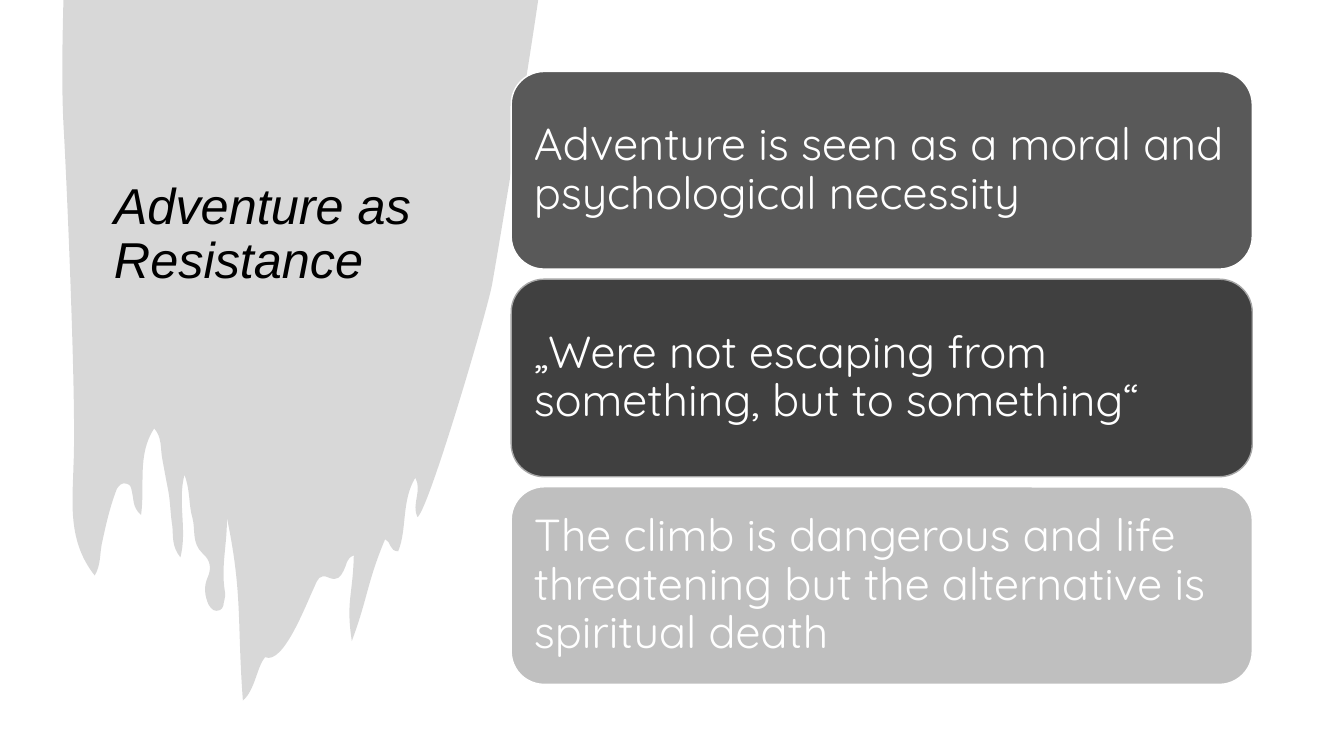
from pptx import Presentation
from pptx.dml.color import RGBColor
from pptx.enum.shapes import MSO_SHAPE
from pptx.enum.text import MSO_ANCHOR, MSO_AUTO_SIZE, PP_ALIGN
from pptx.oxml.ns import qn
from pptx.util import Pt
from lxml.etree import SubElement

# Content: lengths in px, 100 px to the inch
PX = 9144
PAGE = (1333, 750)
TITLE = "Adventure as Resistance"
CARDS = [  # text, fill, line
    ("Adventure is seen as a moral and psychological necessity", "595959", "FFFFFF"),
    ("„Were not escaping from something, but to something“", "404040", "A6A6A6"),
    ("The climb is dangerous and life threatening but the alternative is spiritual death",
     "BFBFBF", "FFFFFF"),
]
LEFT, TOP, WIDE, HIGH, STEP = 507, 71, 735, 196, 206

# Brush stroke: top edge, then curves as two control points and an end point
EDGE = [(63, -1), (534, -1)]
CURVES = [
    (522, 81, 498, 226, 488, 283), (481, 317, 424, 509, 414, 513),
    (408, 500, 419, 487, 412, 474), (398, 497, 404, 525, 395, 547),
    (386, 547, 388, 537, 382, 535), (364, 578, 365, 593, 349, 636),
    (343, 597, 350, 591, 351, 551), (343, 554, 344, 561, 341, 566),
    (338, 572, 335, 577, 326, 573), (317, 569, 315, 575, 312, 582),
    (303, 601, 281, 660, 263, 652), (255, 661, 253, 685, 241, 695),
    (235, 616, 241, 590, 225, 513), (226, 537, 219, 561, 223, 586),
    (224, 590, 223, 594, 222, 598), (222, 602, 220, 606, 215, 606),
    (211, 606, 209, 603, 207, 600), (203, 591, 202, 582, 206, 573),
    (210, 564, 209, 556, 201, 549), (190, 539, 194, 525, 191, 514),
    (187, 501, 189, 487, 183, 471), (176, 499, 186, 525, 179, 553),
    (170, 542, 172, 531, 171, 522), (169, 510, 169, 498, 167, 487),
    (165, 477, 163, 466, 161, 455), (159, 445, 161, 434, 153, 425),
    (136, 451, 144, 481, 140, 511), (131, 503, 133, 495, 131, 488),
    (130, 484, 130, 481, 126, 480), (121, 478, 118, 482, 116, 485),
    (109, 503, 105, 521, 101, 540), (99, 550, 100, 561, 94, 571),
    (67, 537, 72, 499, 73, 461), (76, 400, 66, 174, 63, 123),
    (61, 82, 62, 41, 63, 0),
]


def color(code):
    return RGBColor.from_string(code)


def scale(*sizes):
    return [size * PX for size in sizes]


def paint(shape, fill, line=None):
    shape.shadow.inherit = False
    shape.fill.solid()
    shape.fill.fore_color.rgb = color(fill)
    if line:
        shape.line.color.rgb = color(line)
        shape.line.width = Pt(1)
    else:
        shape.line.fill.background()


def write(shape, text, size=32, font="Quicksand", ink="FFFFFF", slant=False, inset=10):
    frame = shape.text_frame
    frame.word_wrap = True
    frame.auto_size = MSO_AUTO_SIZE.NONE
    frame.vertical_anchor = MSO_ANCHOR.MIDDLE
    frame.margin_left = frame.margin_right = inset * PX
    frame.margin_top = frame.margin_bottom = inset * PX
    line = frame.paragraphs[0]
    line.alignment = PP_ALIGN.LEFT
    line.line_spacing = 0.9
    run = line.add_run()
    run.text = text
    run.font.size = Pt(size)
    run.font.name = font
    run.font.italic = slant
    run.font.color.rgb = color(ink)


def bend(shape):
    """Join every three lines after the top edge into one cubic curve."""
    lines = list(shape.element.iter(qn("a:lnTo")))[1:]
    for i in range(0, len(lines), 3):
        curve = lines[i].makeelement(qn("a:cubicBezTo"))
        lines[i].addprevious(curve)
        for line in lines[i:i + 3]:
            curve.append(line[0])
            line.getparent().remove(line)


deck = Presentation()
deck.slide_width, deck.slide_height = scale(*PAGE)
slide = deck.slides.add_slide(deck.slide_layouts[5])
shapes = slide.shapes
title = shapes.title

# White ground
ground = shapes.add_shape(MSO_SHAPE.RECTANGLE, 0, 0, *scale(*PAGE))
paint(ground, "FFFFFF")

# Brush stroke
points = EDGE + [c[k:k + 2] for c in CURVES for k in (0, 2, 4)]
pen = shapes.build_freeform(*points[0], scale=PX)
pen.add_line_segments(points[1:])
brush = pen.convert_to_shape()
bend(brush)
paint(brush, "404040")
tone = brush.fill._xPr.solidFill[0]
SubElement(tone, qn("a:alpha"), val="20000")

# Title, in front of ground and brush
brush.element.addnext(title.element)
title.left, title.top, title.width, title.height = scale(103, 16, 482, 435)
write(title, TITLE, size=36, font="Arial", ink="000000", slant=True)

# Cards
for row, (text, fill, line) in enumerate(CARDS):
    box = scale(LEFT, TOP + row * STEP, WIDE, HIGH)
    card = shapes.add_shape(MSO_SHAPE.ROUNDED_RECTANGLE, *box)
    paint(card, fill, line)
    write(card, text, inset=13)

deck.save("out.pptx")
